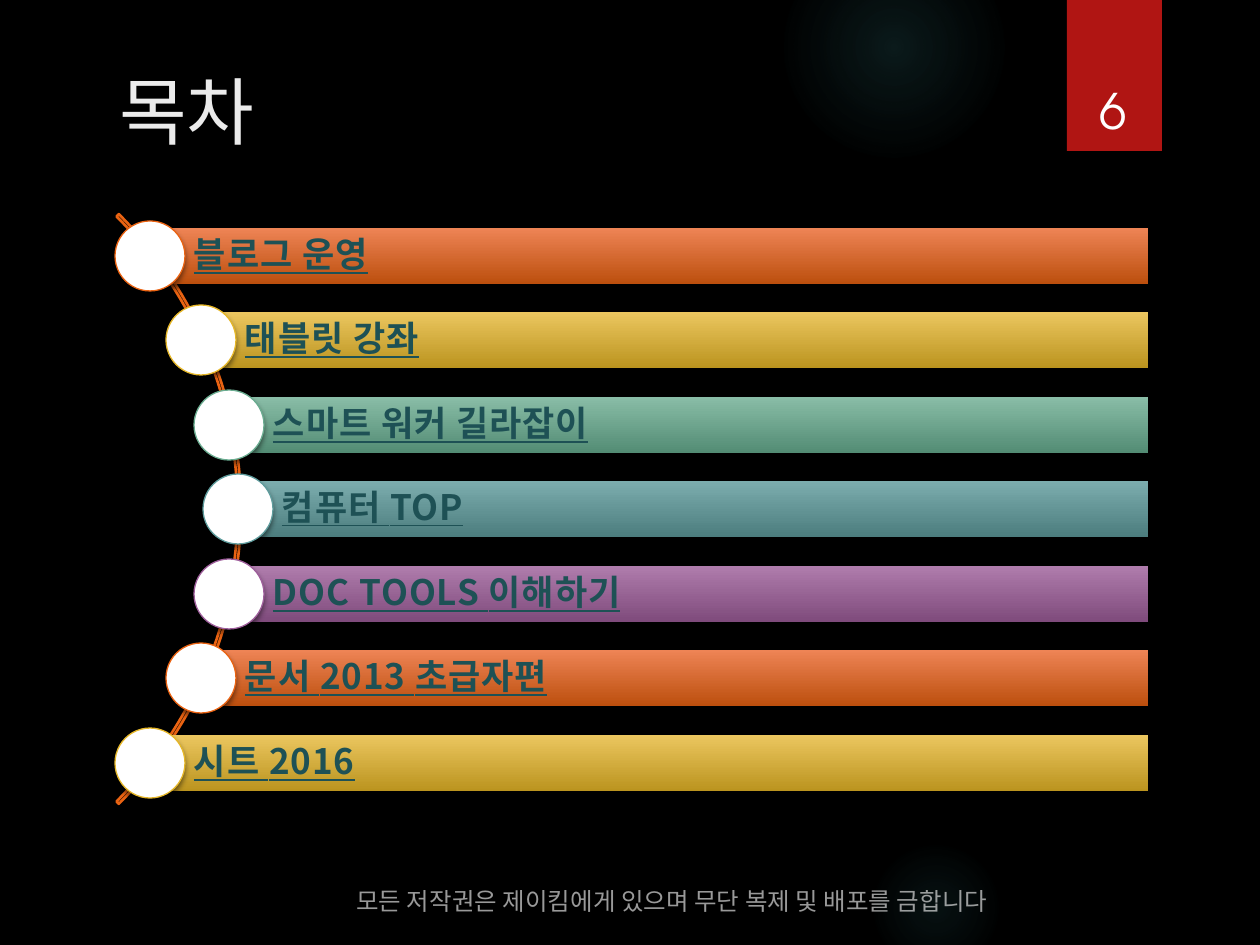
from lxml import etree
from pptx import Presentation
from pptx.dml.color import RGBColor
from pptx.enum.shapes import MSO_SHAPE
from pptx.enum.text import MSO_ANCHOR, PP_ALIGN
from pptx.oxml import parse_xml
from pptx.oxml.ns import qn
from pptx.util import Emu, Pt

RECTANGLE, OVAL, ARC = MSO_SHAPE.RECTANGLE, MSO_SHAPE.OVAL, MSO_SHAPE.BLOCK_ARC
MIDDLE, BOTTOM = MSO_ANCHOR.MIDDLE, MSO_ANCHOR.BOTTOM
LEFT, CENTER = PP_ALIGN.LEFT, PP_ALIGN.CENTER
NAMESPACE = 'xmlns:a="http://schemas.openxmlformats.org/drawingml/2006/main"'
LATIN, HANGUL = "TeX Gyre Adventor", "Noto Sans CJK KR"
COLORS = {
    "background": "000000", "glow": "50B9C1", "ribbon": "B01513",
    "white": "FFFFFF", "title": "EBEBEB", "link": "1E5155", "arc": "EA6312",
}
THEMES = {
    "orange": ("EA6312", "EE8455", "BC4F0E"),
    "gold": ("E6B729", "EBC65F", "BB941F"),
    "green": ("6AAC90", "89BDA7", "538C74"),
    "teal": ("5F9C9D", "7CADAE", "4C7D7E"),
    "purple": ("9E5E9B", "AF7CAC", "7F4B7C"),
}
ENTRIES = [
    ("블로그 운영", "orange", 150),
    ("태블릿 강좌", "gold", 201),
    ("스마트 워커 길라잡이", "green", 229),
    ("컴퓨터 TOP", "teal", 238),
    ("DOC TOOLS 이해하기", "purple", 229),
    ("문서 2013 초급자편", "orange", 201),
    ("시트 2016", "gold", 150),
]
BAR_TOP, BAR_HEIGHT, BAR_RIGHT, BAR_SPAN = 228, 56, 1148, 507
DOT = 70


def px(length):
    """Turn pixels into EMU."""
    return Emu(round(length * 914400 / 126))


def rgb(value):
    """Turn a hex string into a colour."""
    return RGBColor.from_string(value)


def add_shape(page, kind, area, fill=None, line=None, width=0.75):
    """Add a flat preset shape."""
    shape = page.shapes.add_shape(kind, *map(px, area))
    shape.shadow.inherit = False
    if fill:
        shape.fill.solid()
        shape.fill.fore_color.rgb = rgb(fill)
    else:
        shape.fill.background()
    if line:
        shape.line.color.rgb = rgb(line)
        shape.line.width = Pt(width)
    else:
        shape.line.fill.background()
    return shape


def add_shadow(shape):
    """Give a shape a soft shadow below it."""
    effects = shape._element.spPr.find(qn("a:effectLst"))
    effects.append(parse_xml(
        f'<a:outerShdw {NAMESPACE} blurRad="38100" dist="25400" dir="5400000" '
        'rotWithShape="0"><a:srgbClr val="000000"><a:alpha val="45000"/>'
        '</a:srgbClr></a:outerShdw>'))


def add_glow(page, area, stops):
    """Add a round glow that fades out from its centre."""
    shape = add_shape(page, OVAL, area)
    marks = "".join(
        f'<a:gs pos="{place * 1000}"><a:srgbClr val="{COLORS["glow"]}">'
        f'<a:alpha val="{alpha * 1000}"/></a:srgbClr></a:gs>'
        for place, alpha in stops)
    properties = shape._element.spPr
    properties.replace(properties.find(qn("a:noFill")), parse_xml(
        f'<a:gradFill {NAMESPACE} rotWithShape="1"><a:gsLst>{marks}</a:gsLst>'
        '<a:path path="circle"><a:fillToRect l="50000" t="50000" r="50000" '
        'b="50000"/></a:path></a:gradFill>'))


def write_text(shape, text, size, color, font=LATIN, anchor=MIDDLE, align=LEFT,
               bold=False, underline=False, spacing=0, alpha=None):
    """Write one formatted line into a shape and return its paragraph."""
    frame = shape.text_frame
    frame.word_wrap = True
    frame.vertical_anchor = anchor
    para = frame.paragraphs[0]
    para.alignment = align
    span = para.add_run()
    span.text = text
    span.font.name = font
    span.font.size = Pt(size)
    span.font.bold = bold
    span.font.underline = underline
    span.font.color.rgb = rgb(color)
    properties = span._r.get_or_add_rPr()
    properties.set("spc", str(spacing))
    etree.SubElement(properties, qn("a:ea")).set("typeface", HANGUL)
    if alpha:
        tint = properties.find(".//" + qn("a:srgbClr"))
        etree.SubElement(tint, qn("a:alpha")).set("val", str(alpha * 1000))
    return para


def add_text(page, area, text, size, color, **style):
    """Add a text box with one line."""
    box = page.shapes.add_textbox(*map(px, area))
    write_text(box, text, size, color, **style)


def add_entry(page, index, text, theme, center):
    """Add one row of the contents: a bar with its text and a dot."""
    line, light, dark = THEMES[theme]
    top = BAR_TOP + index * BAR_SPAN // (len(ENTRIES) - 1)
    bar = add_shape(page, RECTANGLE, (center, top, BAR_RIGHT - center, BAR_HEIGHT))
    bar.fill.gradient()
    bar.fill.gradient_angle = 270
    for stop, place, color in zip(bar.fill.gradient_stops, (0, 1), (light, dark)):
        stop.position = place
        stop.color.rgb = rgb(color)
    add_shadow(bar)
    frame = bar.text_frame
    frame.margin_left = px(44)
    frame.margin_top = frame.margin_right = frame.margin_bottom = px(8)
    para = write_text(bar, text, 20, COLORS["link"], font=HANGUL, bold=True,
                      underline=True, spacing=50)
    para.line_spacing = 0.9
    para.space_after = Pt(7)
    dot_top = top + (BAR_HEIGHT - DOT) // 2
    dot = add_shape(page, OVAL, (center - DOT // 2, dot_top, DOT, DOT),
                    COLORS["white"], line)
    add_shadow(dot)


def main():
    """Build the contents slide."""
    deck = Presentation()
    deck.slide_width, deck.slide_height = px(1260), px(945)
    page = deck.slides.add_slide(deck.slide_layouts[6])
    page.background.fill.solid()
    page.background.fill.fore_color.rgb = rgb(COLORS["background"])

    add_glow(page, (784, -63, 220, 220), [(0, 14), (36, 7), (73, 0)])
    add_glow(page, (868, 840, 136, 136), [(0, 9), (36, 5), (66, 0)])
    add_shadow(add_shape(page, RECTANGLE, (1067, 0, 95, 151), COLORS["ribbon"]))
    add_text(page, (344, 872, 779, 50),
             "모든 저작권은 제이킴에게 있으며 무단 복제 및 배포를 금합니다",
             14, COLORS["white"], anchor=BOTTOM, alpha=60)
    add_text(page, (1070, 40, 87, 106), "6", 28, COLORS["white"],
             anchor=BOTTOM, align=CENTER)

    arc = add_shape(page, ARC, (-593, 92, 834, 834), line=COLORS["arc"], width=1.5)
    for index, value in enumerate((189, 27, 0.004)):
        arc.adjustments[index] = value
    for index, entry in enumerate(ENTRIES):
        add_entry(page, index, *entry)
    add_text(page, (107, 63, 932, 94), "목차", 42, COLORS["title"])
    deck.save("out.pptx")


if __name__ == "__main__":
    main()
